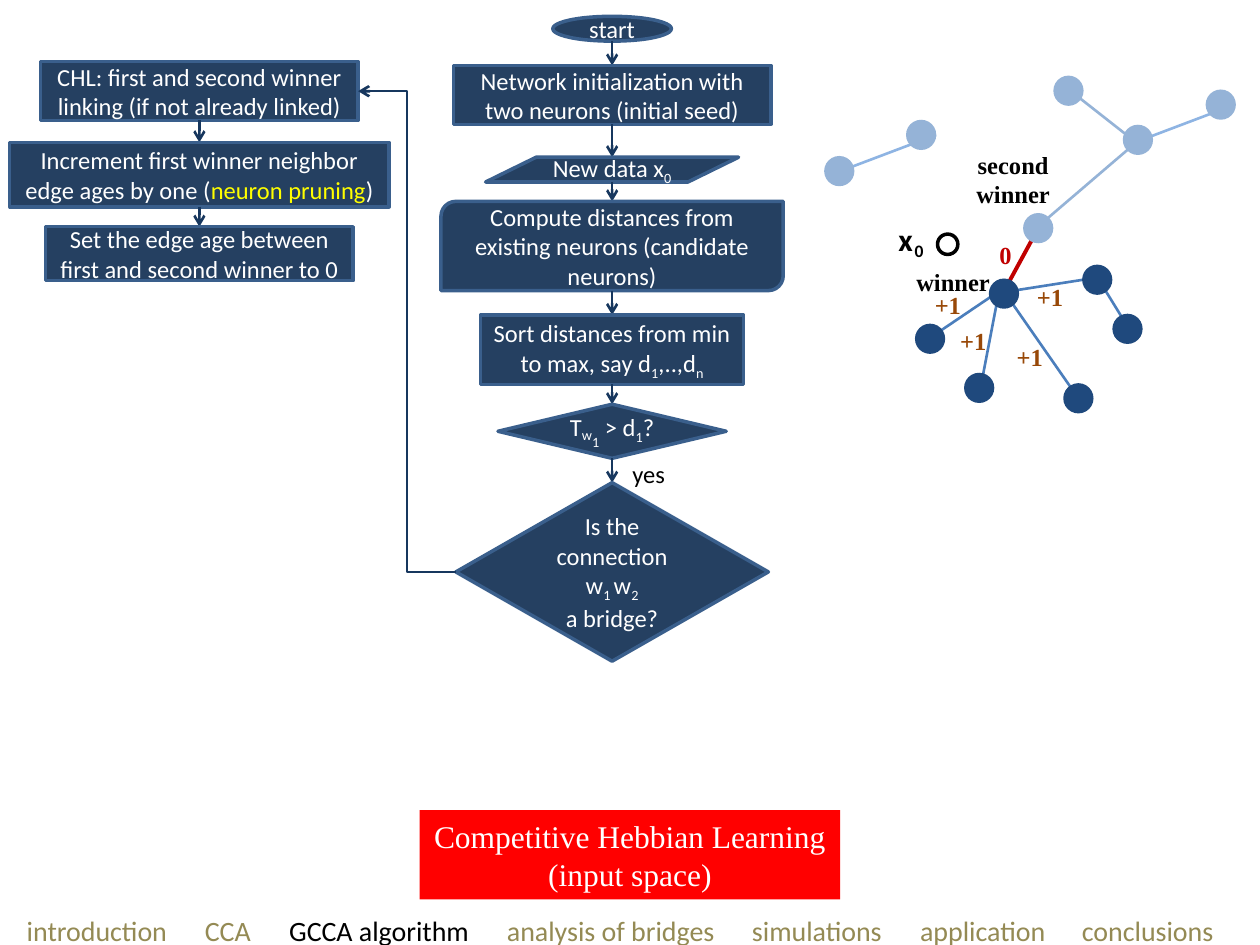
import pptx
import pptx.dml.color
import pptx.enum.shapes
import pptx.enum.text
import pptx.oxml.ns
import pptx.util
from lxml import etree

Cm, Pt = pptx.util.Cm, pptx.util.Pt
RGB = pptx.dml.color.RGBColor
SHAPE = pptx.enum.shapes.MSO_SHAPE
CONNECTOR = pptx.enum.shapes.MSO_CONNECTOR
ALIGN = pptx.enum.text.PP_ALIGN
ANCHOR = pptx.enum.text.MSO_ANCHOR
qn = pptx.oxml.ns.qn

WHITE = RGB(0xFF, 0xFF, 0xFF)
BLACK = RGB(0, 0, 0)
RED = RGB(0xFF, 0, 0)
YELLOW = RGB(0xFF, 0xFF, 0)
BOX_FILL = RGB(0x25, 0x40, 0x61)
BOX_LINE = RGB(0x3A, 0x5F, 0x8C)
ARROW = RGB(0x17, 0x37, 0x5E)
DARK_NEURON = RGB(0x1F, 0x49, 0x7D)
LIGHT_NEURON = RGB(0x95, 0xB3, 0xD7)
DARK_EDGE = RGB(0x4B, 0x7E, 0xBC)
LIGHT_EDGE = RGB(0x8E, 0xB4, 0xE3)
WINNER_EDGE = RGB(0xC0, 0, 0)
AGE = RGB(0x98, 0x48, 0x07)
NAV = RGB(0x94, 0x8A, 0x54)
SANS, SERIF = "Calibri", "Times New Roman"


def add_run(p, text, size=14, color=BLACK, font=SANS, bold=False, base=0):
    r = p.add_run()
    r.text = text
    r.font.size, r.font.name, r.font.bold = Pt(size), font, bold
    r.font.color.rgb = color
    if base:
        r._r.get_or_add_rPr().set("baseline", str(base * 1000))


def sub(text, base=-25):
    return text, {"base": base}


class SlideBuilder:
    def __init__(self, s):
        self.s = s

    def set_text(self, tf, paragraphs, align=ALIGN.CENTER, **fmt):
        """Each paragraph is a string or a list of strings and (string, format) pairs."""
        for i, runs in enumerate(paragraphs):
            p = tf.paragraphs[0] if i == 0 else tf.add_paragraph()
            p.alignment = align
            for run in [runs] if isinstance(runs, str) else runs:
                text, extra = (run, {}) if isinstance(run, str) else run
                add_run(p, text, **{**fmt, **extra})

    def shape(self, kind, x, y, w, h, fill=None, line=None):
        sp = self.s.shapes.add_shape(kind, Cm(x), Cm(y), Cm(w), Cm(h))
        sp.shadow.inherit = False
        if fill is None:
            sp.fill.background()
        else:
            sp.fill.solid()
            sp.fill.fore_color.rgb = fill
        if line is None:
            sp.line.fill.background()
        else:
            sp.line.color.rgb, sp.line.width = line, Pt(2)
        return sp

    def label(self, x, y, w, h, *paragraphs, **fmt):
        sp = self.s.shapes.add_textbox(Cm(x), Cm(y), Cm(w), Cm(h))
        sp.text_frame.word_wrap = False
        self.set_text(sp.text_frame, paragraphs, **fmt)

    def line(self, x1, y1, x2, y2, color=ARROW, width=1.5, arrow=False,
             kind=CONNECTOR.STRAIGHT):
        c = self.s.shapes.add_connector(kind, Cm(x1), Cm(y1), Cm(x2), Cm(y2))
        c.line.color.rgb, c.line.width = color, Pt(width)
        sp_pr = c._element.spPr
        if arrow:
            etree.SubElement(sp_pr.find(qn("a:ln")), qn("a:tailEnd"), type="arrow")
        etree.SubElement(sp_pr, qn("a:effectLst"))

    def flow(self, cx, steps):
        """Stack steps around the centre line cx and join each to the next."""
        for i, (kind, y, w, h, *paragraphs) in enumerate(steps):
            sp = self.shape(kind, cx - w / 2, y, w, h, BOX_FILL, BOX_LINE)
            sp.text_frame.word_wrap = True
            sp.text_frame.vertical_anchor = ANCHOR.MIDDLE
            self.set_text(sp.text_frame, paragraphs, color=WHITE)
            if i + 1 < len(steps):
                self.line(cx, y + h, cx, steps[i + 1][1], arrow=True)

    def neuron(self, cx, cy, color, d=0.61):
        self.shape(SHAPE.OVAL, cx - d / 2, cy - d / 2, d, d, color)

    def nav(self, items, current, left=0.54):
        """Section names, each at its own tab stop, given as (position, name)."""
        sp = self.s.shapes.add_textbox(0, Cm(18.29), Cm(25.4), Cm(0.94))
        tf = sp.text_frame
        tf.word_wrap, tf.margin_left, tf.margin_right = True, Cm(left), 0
        tabs = etree.SubElement(tf.paragraphs[0]._p.get_or_add_pPr(), qn("a:tabLst"))
        for x, _ in items[1:]:
            etree.SubElement(tabs, qn("a:tab"), pos=str(Cm(x - left)), algn="l")
        runs = [(("\t" if i else "") + name, {"color": BLACK if name == current else NAV})
                for i, (_, name) in enumerate(items)]
        self.set_text(tf, [runs], align=ALIGN.LEFT, size=16)


MAIN_STEPS = [
    (SHAPE.OVAL, 0.33, 2.39, 0.5, "start"),
    (SHAPE.RECTANGLE, 1.32, 6.4, 1.19,
     "Network initialization with two neurons (initial seed)"),
    (SHAPE.FLOWCHART_DATA, 3.17, 5.1, 0.5, ["New data x", sub("0")]),
    (SHAPE.ROUND_2_DIAG_RECTANGLE, 4.06, 6.9, 1.8,
     "Compute distances from existing neurons (candidate neurons)"),
    (SHAPE.FLOWCHART_PROCESS, 6.35, 5.3, 1.4,
     ["Sort distances from min to max, say d", sub("1"), ",..,d", sub("n")]),
    (SHAPE.FLOWCHART_DECISION, 8.15, 4.6, 1.09,
     ["T", sub("w", -16), sub("1", -46), " > d", sub("1"), "?"]),
    (SHAPE.FLOWCHART_DECISION, 9.73, 6.3, 3.6,
     ["Is the connection w", sub("1 "), "w", sub("2")], "a bridge?"),
]
LEARNING_STEPS = [
    (SHAPE.FLOWCHART_PROCESS, 1.24, 6.4, 1.19,
     "CHL: first and second winner linking (if not already linked)"),
    (SHAPE.FLOWCHART_PROCESS, 2.87, 7.65, 1.3,
     ["Increment first winner neighbor edge ages by one (",
      ("neuron pruning", {"color": YELLOW}), ")"]),
    (SHAPE.FLOWCHART_PROCESS, 4.57, 6.2, 1.09,
     "Set the edge age between first and second winner to 0"),
]
EDGES = {
    DARK_EDGE: [(20.14, 5.87, 19.76, 7.85), (20.14, 5.87, 18.72, 6.83),
                (20.27, 5.92, 21.74, 8.03), (20.04, 5.92, 22.15, 5.59),
                (22.76, 6.63, 22.12, 5.59)],
    LIGHT_NEURON: [(22.94, 2.84, 21.13, 4.39), (22.94, 2.9, 21.54, 1.8)],
    LIGHT_EDGE: [(24.89, 2.11, 22.96, 2.84), (18.87, 2.72, 16.94, 3.45)],
}
NEURONS = {
    DARK_NEURON: [(19.74, 7.82), (22.12, 5.64), (18.75, 6.83),
                  (22.73, 6.63), (21.74, 8.03), (20.24, 5.92)],
    LIGHT_NEURON: [(22.94, 2.82), (24.61, 2.11), (21.54, 1.83),
                   (20.93, 4.6), (16.92, 3.45), (18.57, 2.72)],
}
AGE_LABELS = [(18.59, 5.72), (19.1, 6.45), (20.24, 6.78), (20.65, 5.56)]
SECTIONS = [(0.54, "introduction"), (4.13, "CCA"), (5.83, "GCCA algorithm"),
            (10.22, "analysis of bridges"), (15.16, "simulations"),
            (18.55, "application"), (21.81, "conclusions")]


def main():
    prs = pptx.Presentation()
    prs.slide_width, prs.slide_height = Cm(25.4), Cm(19.05)
    b = SlideBuilder(prs.slides.add_slide(prs.slide_layouts[6]))

    b.flow(12.34, MAIN_STEPS)
    b.flow(4.02, LEARNING_STEPS)
    b.line(9.19, 11.53, 7.22, 1.84, arrow=True, kind=CONNECTOR.ELBOW)
    b.label(12.5, 9.12, 1.19, 0.86, "yes", align=ALIGN.LEFT)

    b.line(20.24, 5.87, 20.93, 4.6, WINNER_EDGE, 2.25)
    for color, edges in EDGES.items():
        for ends in edges:
            b.line(*ends, color)
    for color, centres in NEURONS.items():
        for cx, cy in centres:
            b.neuron(cx, cy, color)

    serif = {"font": SERIF, "bold": True}
    b.label(18.21, 5.26, 2.01, 0.86, "winner", **serif)
    b.label(19.41, 2.9, 2.03, 1.45, "second", "winner", **serif)
    b.label(19.89, 4.72, 0.76, 0.86, "0", color=WINNER_EDGE, **serif)
    for x, y in AGE_LABELS:
        b.label(x, y, 1.04, 0.86, "+1", color=AGE, **serif)
    b.label(17.86, 4.32, 0.81, 1.8, "x", size=18, bold=True, align=ALIGN.LEFT)
    b.label(18.19, 4.72, 0.69, 0.69, "0", size=10, bold=True, align=ALIGN.LEFT)
    b.shape(SHAPE.OVAL, 18.9, 4.72, 0.41, 0.41, line=BLACK)

    banner = b.shape(SHAPE.RECTANGLE, 8.46, 16.33, 8.48, 1.8, RED)
    banner.text_frame.word_wrap = False
    b.set_text(banner.text_frame, ["Competitive Hebbian Learning", "(input space)"],
               size=18, color=WHITE, font=SERIF)
    b.nav(SECTIONS, "GCCA algorithm")
    prs.save("out.pptx")


if __name__ == "__main__":
    main()
